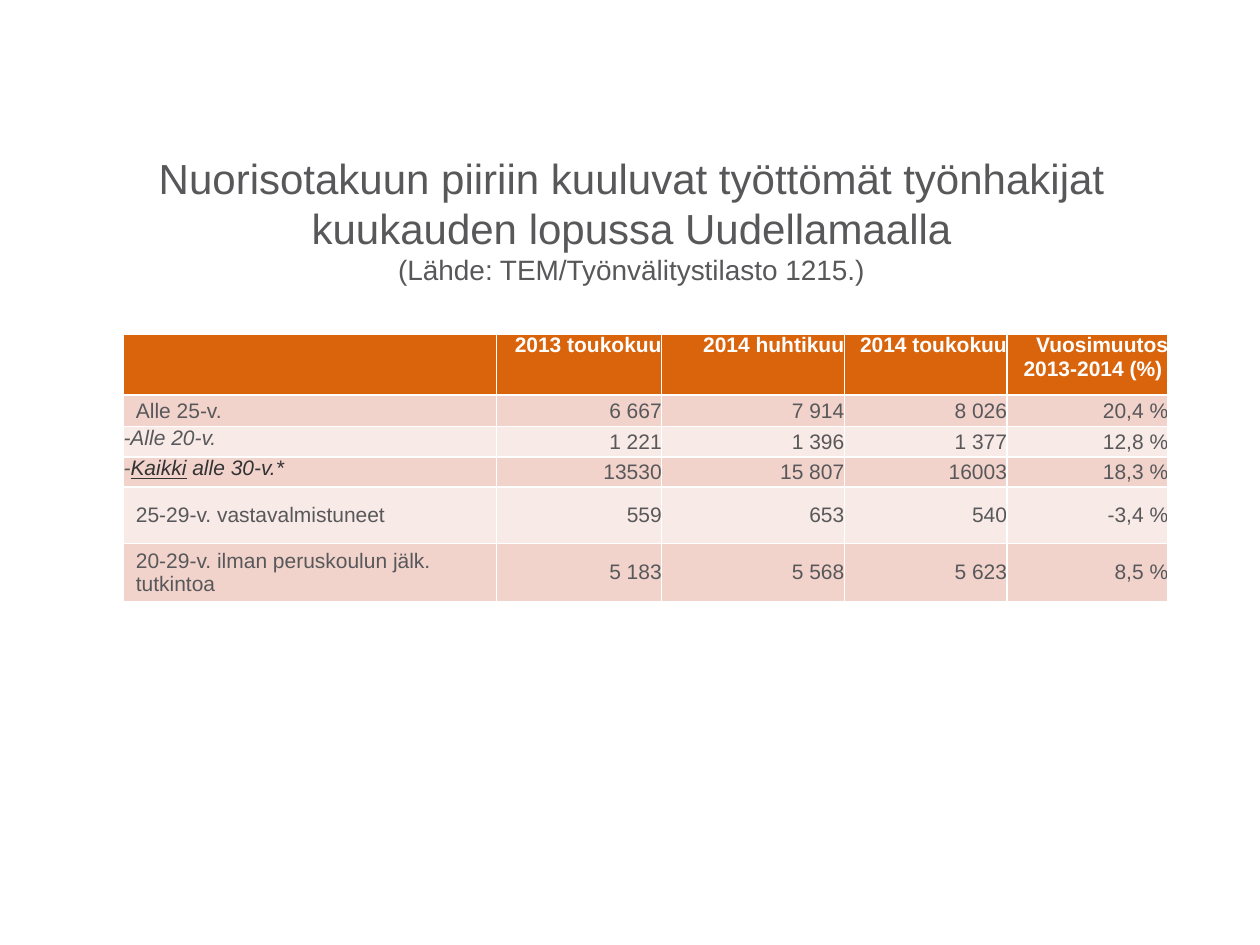
from typing import NamedTuple

from lxml.etree import SubElement
from pptx import Presentation
from pptx.dml.color import RGBColor
from pptx.enum.text import MSO_ANCHOR, PP_ALIGN
from pptx.oxml.ns import qn
from pptx.util import Cm, Pt

HUES = {
    "head": "D9640C",
    "dark": "F1D3CC",
    "light": "F8EAE7",
    "line": "FFFFFF",
    "text": "58585A",
    "ink": "333333",
}
FONT = "Arial"


class Span(NamedTuple):
    text: str
    hue: str = "text"
    size: float = 12
    line: bool = False


class Row(NamedTuple):
    high: float
    label: list[Span]
    data: list[str]
    sub: bool = False


WIDTHS = [7.52, 3.33, 3.68, 3.28, 3.25]
ROWS = [
    Row(1.24, [], ["2013 toukokuu", "2014 huhtikuu", "2014 toukokuu", "Vuosimuutos 2013-2014 (%) "]),
    Row(0.63, [Span("Alle 25-v.")], ["6 667", "7 914", "8 026", "20,4 %"]),
    Row(0.61, [Span("-Alle 20-v.")], ["1 221", "1 396", "1 377", "12,8 %"], True),
    Row(
        0.61,
        [Span("-"), Span("Kaikki", "ink", line=True), Span(" alle 30-v.*", "ink")],
        ["13530", "15 807", "16003", "18,3 %"],
        True,
    ),
    Row(1.14, [Span("25-29-v. vastavalmistuneet")], ["559", "653", "540", "-3,4 %"]),
    Row(1.17, [Span("20-29-v. ilman peruskoulun jälk. tutkintoa")], ["5 183", "5 568", "5 623", "8,5 %"]),
]


def color(name: str) -> RGBColor:
    return RGBColor.from_string(HUES[name])


def style(font, hue: str, size: float, bold: bool = False, slant: bool = False) -> None:
    font.name = FONT
    font.size = Pt(size)
    font.bold = bold
    font.italic = slant
    font.color.rgb = color(hue)


def add_span(para, span: Span, slant: bool = False) -> None:
    run = para.add_run()
    run.text = span.text
    style(run.font, span.hue, span.size, slant=slant)
    if span.line:
        run.font.underline = True


def edge(cell, side: str, width: float) -> None:
    props = cell._tc.get_or_add_tcPr()
    line = SubElement(props, qn(f"a:{side}"), w=str(Pt(width)))
    fill = SubElement(line, qn("a:solidFill"))
    SubElement(fill, qn("a:srgbClr"), val=HUES["line"])


def dress(cell, row: int, fill: str, left: float, top: bool) -> None:
    cell.margin_left = Cm(left)
    cell.margin_top = cell.margin_right = cell.margin_bottom = 0
    cell.vertical_anchor = MSO_ANCHOR.TOP if top else MSO_ANCHOR.MIDDLE
    for side in ("lnL", "lnR", "lnT", "lnB"):
        thick = (row, side) in ((0, "lnB"), (1, "lnT"))
        edge(cell, side, 1.5 if thick else 1)
    cell.fill.solid()
    cell.fill.fore_color.rgb = color(fill)


def add_title(slide) -> None:
    box = slide.shapes.add_textbox(Cm(1.3), Cm(3.53), Cm(22.86), Cm(1.78))
    frame = box.text_frame
    frame.word_wrap = True
    frame.vertical_anchor = MSO_ANCHOR.MIDDLE
    para = frame.paragraphs[0]
    para.alignment = PP_ALIGN.CENTER
    add_span(para, Span("Nuorisotakuun piiriin kuuluvat työttömät työnhakijat kuukauden lopussa Uudellamaalla", size=24))
    para.add_line_break()
    add_span(para, Span("(Lähde: TEM/Työnvälitystilasto 1215.)", size=16))


def add_label(cell, row: Row) -> None:
    para = cell.text_frame.paragraphs[0]
    if len(row.label) == 1:
        para.text = row.label[0].text
        style(para.font, "text", 12, slant=row.sub)
    else:
        for span in row.label:
            add_span(para, span, row.sub)


def add_grid(slide) -> None:
    frame = slide.shapes.add_table(
        len(ROWS), len(WIDTHS), Cm(2.49), Cm(6.73),
        Cm(sum(WIDTHS)), Cm(sum(row.high for row in ROWS)),
    )
    table = frame.table
    for col, width in zip(table.columns, WIDTHS):
        col.width = Cm(width)
    for i, row in enumerate(ROWS):
        table.rows[i].height = Cm(row.high)
        head = i == 0
        fill = "head" if head else "dark" if i % 2 else "light"
        first = table.cell(i, 0)
        dress(first, i, fill, 0 if head or row.sub else 0.25, head or row.sub)
        add_label(first, row)
        for j, value in enumerate(row.data, 1):
            cell = table.cell(i, j)
            dress(cell, i, fill, 0, head)
            para = cell.text_frame.paragraphs[0]
            para.text = value
            para.alignment = PP_ALIGN.RIGHT
            style(para.font, "line" if head else "text", 12, bold=head)


def main() -> None:
    deck = Presentation()
    deck.slide_width, deck.slide_height = Cm(25.4), Cm(19.05)
    slide = deck.slides.add_slide(deck.slide_layouts[6])
    add_title(slide)
    add_grid(slide)
    deck.save("out.pptx")


if __name__ == "__main__":
    main()
